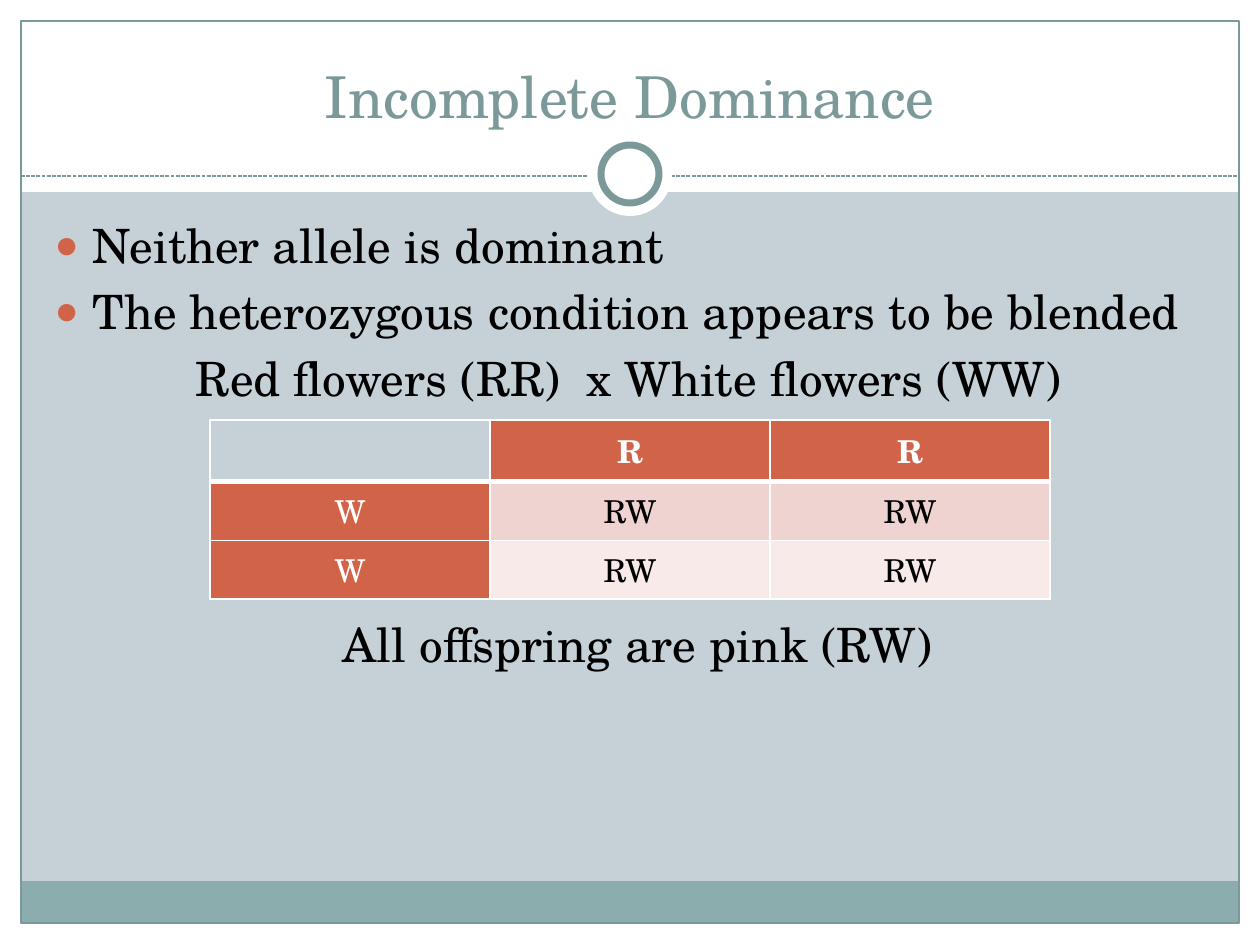
from lxml.etree import SubElement
from pptx import Presentation
from pptx.dml.color import RGBColor
from pptx.enum.dml import MSO_LINE
from pptx.enum.shapes import MSO_CONNECTOR, MSO_SHAPE
from pptx.enum.text import MSO_ANCHOR, MSO_AUTO_SIZE, PP_ALIGN
from pptx.oxml.ns import qn
from pptx.util import Emu, Pt

FONT = "TeX Gyre Schola"
WHITE, BLACK, TEAL, BAND = "FFFFFF", "000000", "7C999A", "8CADAE"
RED, PINK, PALE, GROUND = "D16349", "EED3D0", "F7EAE9", "C5D1D7"
SPACE, LINE_PITCH = 5.5, 38


def px(n):
    return Emu(n * 914400 // 126)


def rgb(value):
    return RGBColor.from_string(value)


def add_xml(parent, tag, **attrs):
    return SubElement(parent, qn(tag), {k: str(v) for k, v in attrs.items()})


class Deck:
    def __init__(self):
        self.prs = Presentation()
        self.prs.slide_width, self.prs.slide_height = px(1260), px(945)
        self.s = self.prs.slides.add_slide(self.prs.slide_layouts[1])
        self.s.background.fill.solid()
        self.s.background.fill.fore_color.rgb = rgb(GROUND)

    def shape(self, kind, x, y, w, h, fill=None, line=None, width=0.75):
        sp = self.s.shapes.add_shape(kind, px(x), px(y), px(w), px(h))
        sp.shadow.inherit = False
        if fill:
            sp.fill.solid()
            sp.fill.fore_color.rgb = rgb(fill)
        else:
            sp.fill.background()
        if line:
            sp.line.color.rgb = rgb(line)
            sp.line.width = Pt(width)
        else:
            sp.line.fill.background()

    def dashed_line(self, x1, x2, y):
        cn = self.s.shapes.add_connector(
            MSO_CONNECTOR.STRAIGHT, px(x1), px(y), px(x2), px(y))
        cn.line.color.rgb = rgb(TEAL)
        cn.line.width = Pt(0.75)
        cn.line.dash_style = MSO_LINE.SQUARE_DOT
        add_xml(cn.element.spPr, "a:effectLst")

    def style(self, p, size, color, bold=False):
        p.font.name, p.font.size, p.font.bold = FONT, Pt(size), bold
        p.font.color.rgb = rgb(color)

    def place(self, sp, x, y, w, h, anchor):
        sp.left, sp.top, sp.width, sp.height = px(x), px(y), px(w), px(h)
        self.s.shapes.element.append(sp.element)
        tf = sp.text_frame
        tf.word_wrap = True
        tf.auto_size = MSO_AUTO_SIZE.NONE
        tf.vertical_anchor = anchor
        return tf

    def title(self, text, x, y, w, h):
        tf = self.place(self.s.shapes.title, x, y, w, h, MSO_ANCHOR.BOTTOM)
        tf.text = text
        p = tf.paragraphs[0]
        p.alignment = PP_ALIGN.CENTER
        self.style(p, 33, TEAL)

    def body(self, items, x, y, w, h):
        tf = self.place(self.s.placeholders[1], x, y, w, h, MSO_ANCHOR.TOP)
        tf.text = "\n".join(item[0] for item in items)
        for p, (_, bullet, align, margin, indent, before) in zip(tf.paragraphs, items):
            p.alignment = align
            p.space_before = Pt(before)
            pPr = p._p.get_or_add_pPr()
            pPr.set("marL", str(px(margin)))
            pPr.set("indent", str(px(indent)))
            if bullet:
                add_xml(add_xml(pPr, "a:buClr"), "a:srgbClr", val=RED)
                add_xml(pPr, "a:buSzPct", val=85000)
                add_xml(pPr, "a:buChar", char="●")
            else:
                add_xml(pPr, "a:buNone")
            self.style(p, 27, BLACK)

    def cell(self, cell, text, fill, color, bold, top, bottom):
        tcPr = cell._tc.get_or_add_tcPr()
        for side, width in zip("LRTB", (1, 1, top, bottom)):
            ln = add_xml(tcPr, f"a:ln{side}", w=Pt(width))
            add_xml(add_xml(ln, "a:solidFill"), "a:srgbClr", val=WHITE)
        cell.fill.solid()
        cell.fill.fore_color.rgb = rgb(fill)
        cell.text = text
        p = cell.text_frame.paragraphs[0]
        p.alignment = PP_ALIGN.CENTER
        self.style(p, 18, color, bold)

    def table(self, rows, x, y, w, h):
        tbl = self.s.shapes.add_table(
            len(rows), len(rows[0]), px(x), px(y), px(w), px(h)).table
        tbl.first_row = tbl.horz_banding = False
        for i, row in enumerate(rows):
            for j, text in enumerate(row):
                header = i == 0 or j == 0
                fill = RED if header else (PINK, PALE)[i - 1]
                self.cell(tbl.cell(i, j), text, fill if text else GROUND,
                          WHITE if header else BLACK, i == 0,
                          3 if i == 1 else 1, 3 if i == 0 else 1)


def main():
    deck = Deck()
    rect, oval = MSO_SHAPE.RECTANGLE, MSO_SHAPE.OVAL
    for box in ((0, 924, 1260, 21), (0, 0, 1260, 192),
                (0, 0, 21, 945), (1239, 0, 21, 945)):
        deck.shape(rect, *box, fill=WHITE)
    deck.shape(rect, 21, 881, 1217, 43, fill=BAND)
    deck.shape(rect, 21, 21, 1218, 902, line=TEAL)
    deck.dashed_line(21, 1239, 176)
    deck.shape(oval, 588, 132, 84, 84, fill=WHITE)
    deck.shape(oval, 601, 145, 58, 58, fill=WHITE, line=TEAL, width=4)

    deck.title("Incomplete Dominance", 42, 32, 1176, 104)
    left, center = PP_ALIGN.LEFT, PP_ALIGN.CENTER
    deck.body([
        ("Neither allele is dominant", True, left, 38, -38, SPACE),
        ("The heterozygous condition appears to be blended", True, left, 38, -38, SPACE),
        ("Red flowers (RR)  x White flowers (WW)", False, center, 38, -38, SPACE),
        ("All offspring are pink (RW)", False, left, 288, 0, SPACE + 3 * LINE_PITCH),
    ], 42, 210, 1172, 630)
    deck.table([["", "R", "R"], ["W", "RW", "RW"], ["W", "RW", "RW"]],
               210, 420, 840, 153)
    deck.prs.save("out.pptx")


if __name__ == "__main__":
    main()
